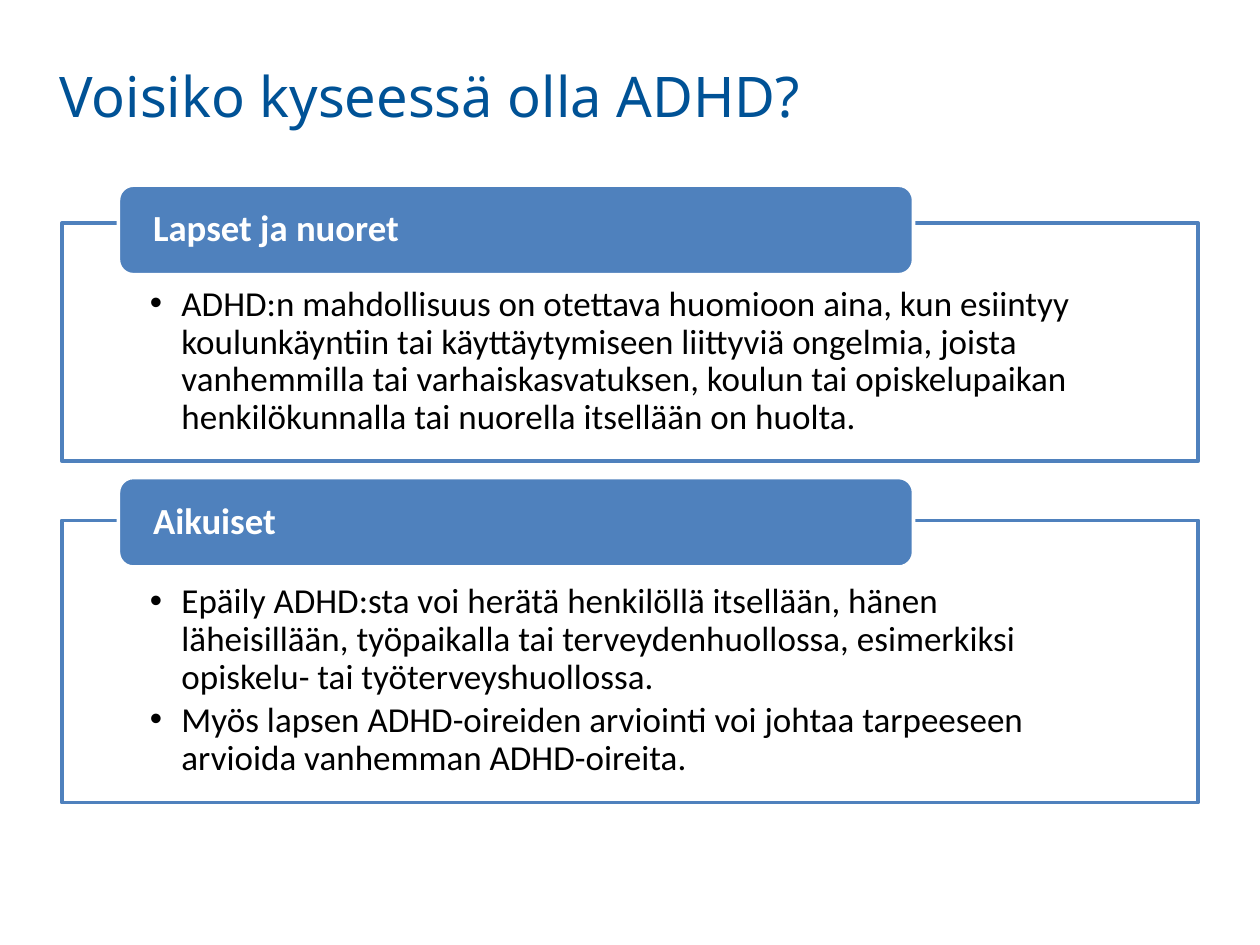
from lxml import etree
from pptx import Presentation
from pptx.dml.color import RGBColor
from pptx.enum.shapes import MSO_SHAPE
from pptx.enum.text import MSO_ANCHOR, PP_ALIGN
from pptx.oxml.ns import qn
from pptx.util import Inches, Pt

RECT, ROUND = MSO_SHAPE.RECTANGLE, MSO_SHAPE.ROUNDED_RECTANGLE
TOP, MIDDLE, LEFT = MSO_ANCHOR.TOP, MSO_ANCHOR.MIDDLE, PP_ALIGN.LEFT
BLUE, WHITE, BLACK, NAVY = "4F81BD", "FFFFFF", "000000", "005296"

GROUPS = [
    ("Lapset ja nuoret", 1.77, 1.89, 1.47, [
        "ADHD:n mahdollisuus on otettava huomioon aina, kun esiintyy "
        "koulunkäyntiin tai käyttäytymiseen liittyviä ongelmia, joista "
        "vanhemmilla tai varhaiskasvatuksen, koulun tai opiskelupaikan "
        "henkilökunnalla tai nuorella itsellään on huolta."]),
    ("Aikuiset", 4.13, 2.24, 3.79, [
        "Epäily ADHD:sta voi herätä henkilöllä itsellään, hänen "
        "läheisillään, työpaikalla tai terveydenhuollossa, esimerkiksi "
        "opiskelu- tai työterveyshuollossa.",
        "Myös lapsen ADHD-oireiden arviointi voi johtaa tarpeeseen "
        "arvioida vanhemman ADHD-oireita."]),
]


def color(code):
    return RGBColor.from_string(code)


class Deck:
    """Holds the style and the current slide."""

    def __init__(self, slide, font, head):
        self.slide, self.font, self.head = slide, font, head

    def text(self, para, words, size, tone, font, bold=False):
        para.alignment = LEFT
        run = para.add_run()
        run.text = words
        run.font.name, run.font.size, run.font.bold = font, Pt(size), bold
        run.font.color.rgb = color(tone)

    def inset(self, frame, side, top, base, anchor):
        frame.word_wrap, frame.vertical_anchor = True, anchor
        frame.margin_left = frame.margin_right = Inches(side)
        frame.margin_top, frame.margin_bottom = Inches(top), Inches(base)

    def title(self, words):
        box = self.slide.shapes.title
        box.left, box.top = Inches(0.37), Inches(0.44)
        box.width, box.height = Inches(9.02), Inches(1.26)
        self.inset(box.text_frame, 0.1, 0.05, 0.05, TOP)
        self.text(box.text_frame.paragraphs[0], words, 32, NAVY, self.head)

    def shape(self, kind, place, fill, line):
        box = self.slide.shapes.add_shape(kind, *map(Inches, place))
        box.shadow.inherit = False
        box.fill.solid()
        box.fill.fore_color.rgb = color(fill)
        box.line.color.rgb, box.line.width = color(line), Pt(2)
        return box

    def panel(self, top, height, items):
        box = self.shape(RECT, (0.49, top, 9.02, height), WHITE, BLUE)
        tone = box.element.spPr.find(qn("a:solidFill"))[0]
        etree.SubElement(tone, qn("a:alpha"), val="90000")
        frame = box.text_frame
        self.inset(frame, 0.7, 0.5, 0.16, TOP)
        for i, words in enumerate(items):
            para = frame.add_paragraph() if i else frame.paragraphs[0]
            para.level, para.line_spacing, para.space_after = 1, 0.9, Pt(3)
            props = para._p.get_or_add_pPr()
            props.set("marL", str(Inches(0.25)))
            props.set("indent", str(-Inches(0.25)))
            etree.SubElement(props, qn("a:buFont"), typeface="Arial")
            etree.SubElement(props, qn("a:buChar"), char="•")
            self.text(para, words, 20, BLACK, self.font)

    def label(self, top, words):
        box = self.shape(ROUND, (0.94, top, 6.31, 0.71), BLUE, WHITE)
        self.inset(box.text_frame, 0.24, 0, 0, MIDDLE)
        para = box.text_frame.paragraphs[0]
        para.line_spacing = 0.9
        self.text(para, words, 21, WHITE, self.font, True)


def main():
    prs = Presentation()
    prs.slide_width, prs.slide_height = Inches(10), Inches(7.5)
    deck = Deck(prs.slides.add_slide(prs.slide_layouts[5]), "Calibri", "Noto Sans")
    deck.title("Voisiko kyseessä olla ADHD?")
    for name, top, height, tab, items in GROUPS:
        deck.panel(top, height, items)
        deck.label(tab, name)
    prs.save("out.pptx")


if __name__ == "__main__":
    main()
